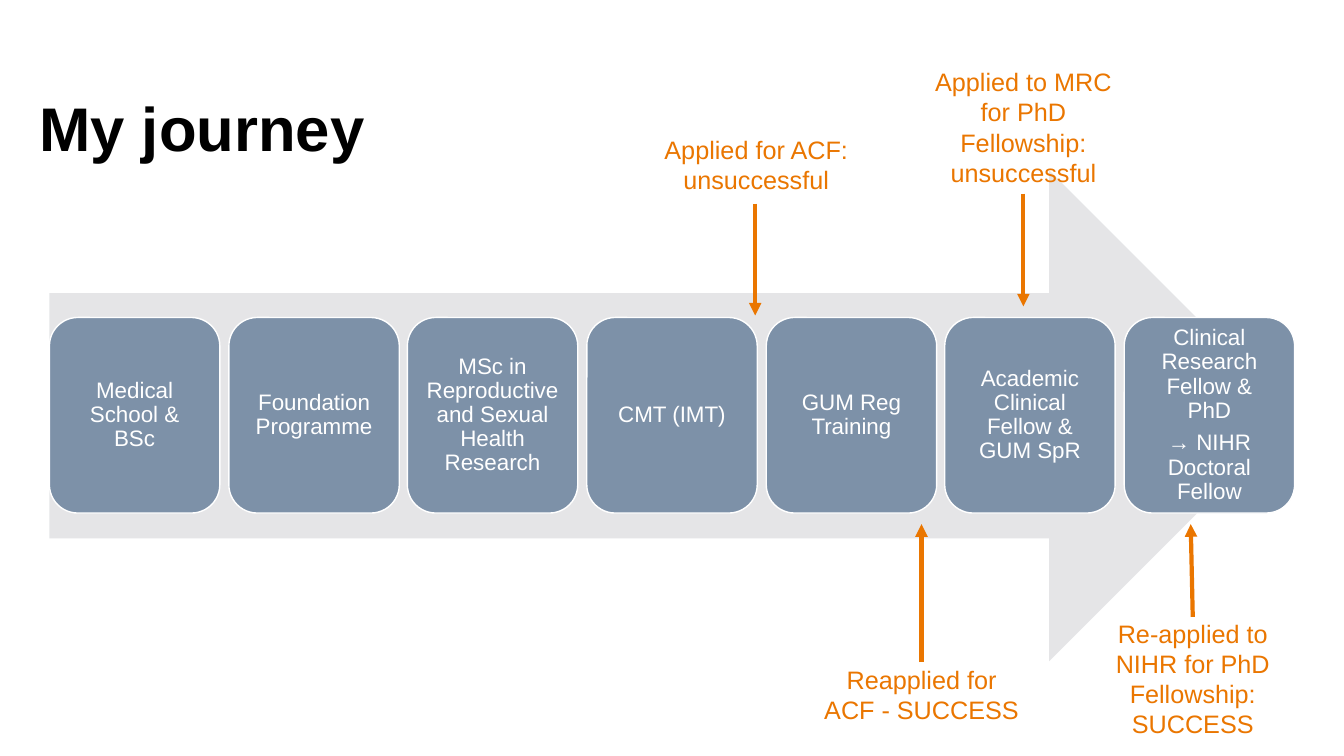
from lxml import etree
from pptx import Presentation
from pptx.dml.color import RGBColor
from pptx.enum.shapes import MSO_CONNECTOR, MSO_SHAPE
from pptx.enum.text import MSO_ANCHOR, MSO_AUTO_SIZE, PP_ALIGN
from pptx.oxml.ns import qn
from pptx.util import Pt

STRAIGHT = MSO_CONNECTOR.STRAIGHT
RIGHT_ARROW = MSO_SHAPE.RIGHT_ARROW
ROUNDED = MSO_SHAPE.ROUNDED_RECTANGLE
RECTANGLE = MSO_SHAPE.RECTANGLE
TOP, MIDDLE = MSO_ANCHOR.TOP, MSO_ANCHOR.MIDDLE
LEFT, CENTER = PP_ALIGN.LEFT, PP_ALIGN.CENTER
GROW, FIXED = MSO_AUTO_SIZE.SHAPE_TO_FIT_TEXT, MSO_AUTO_SIZE.NONE

EMU_PER_PX = 9144
SLIDE_W, SLIDE_H = 1333, 750
NAVY, ORANGE, GREY, WHITE, BLACK = "002855", "EA7600", "CCCDD1", "FFFFFF", "000000"

STAGES = [
    ["Medical School & BSc"],
    ["Foundation Programme"],
    ["MSc in Reproductive and Sexual Health Research"],
    ["CMT (IMT)"],
    ["GUM Reg Training"],
    ["Academic Clinical Fellow & GUM SpR"],
    ["Clinical Research Fellow & PhD", "→ NIHR Doctoral Fellow"],
]
APPLICATIONS = [
    (["Applied to MRC for PhD Fellowship:", "unsuccessful"],
     (904, 61, 222, 131), (1015, 192), (1015, 304)),
    (["Applied for ACF: unsuccessful"],
     (639, 128, 222, 71), (749, 202), (749, 313)),
    (["Reapplied for ACF - SUCCESS"],
     (803, 654, 222, 71), (914, 657), (914, 520)),
    (["Re-applied to NIHR for PhD Fellowship:", "SUCCESS"],
     (1072, 608, 222, 131), (1183, 612), (1181, 520)),
]


def px(*lengths):
    return [length * EMU_PER_PX for length in lengths]


def color(hex_code):
    return RGBColor.from_string(hex_code)


def write(shape, paragraphs, size, ink, bold=False, align=CENTER, anchor=TOP,
          spacing=1.0, gap=0, insets=(10, 5), auto_size=FIXED):
    frame = shape.text_frame
    frame.word_wrap = True
    frame.auto_size = auto_size
    frame.vertical_anchor = anchor
    frame.margin_left = frame.margin_right = insets[0] * EMU_PER_PX
    frame.margin_top = frame.margin_bottom = insets[1] * EMU_PER_PX
    for index, text in enumerate(paragraphs):
        paragraph = frame.add_paragraph() if index else frame.paragraphs[0]
        paragraph.alignment = align
        paragraph.line_spacing = spacing
        paragraph.space_before = Pt(gap if index else 0)
        run = paragraph.add_run()
        run.text = text
        run.font.name = "Arial"
        run.font.size = Pt(size)
        run.font.bold = bold
        run.font.color.rgb = color(ink)


def add_block(slide, preset, box, fill, outline=None):
    block = slide.shapes.add_shape(preset, *px(*box))
    block.shadow.inherit = False
    block.fill.solid()
    block.fill.fore_color.rgb = color(fill)
    if outline:
        block.line.color.rgb = color(outline)
        block.line.width = Pt(1)
    else:
        block.line.fill.background()
    return block


def add_journey(slide, box):
    left, top, width, height = box
    add_block(slide, RIGHT_ARROW, box, GREY)
    card_w, card_h = 169, height * 2 // 5
    pitch = (width - card_w) / (len(STAGES) - 1)
    card_top = top + (height - card_h) // 2
    for index, stage in enumerate(STAGES):
        card_box = (round(left + index * pitch), card_top, card_w, card_h)
        card = add_block(slide, ROUNDED, card_box, NAVY, WHITE)
        write(card, stage, 16, WHITE, anchor=MIDDLE, spacing=0.9, gap=6,
              insets=(10, 10))


def add_veil(slide, box):
    veil = add_block(slide, RECTANGLE, box, WHITE, WHITE)
    tint = veil.fill._xPr.find(qn("a:solidFill"))[0]
    etree.SubElement(tint, qn("a:alpha")).set("val", "49000")


def add_title(slide, box):
    title = slide.shapes.title
    title.left, title.top, title.width, title.height = px(*box)
    write(title, ["My journey"], 44, BLACK, bold=True, align=LEFT,
          spacing=0.9, insets=(0, 0))
    slide.shapes[-1].element.addnext(title.element)


def add_application(slide, outcome, box, start, end):
    label = slide.shapes.add_textbox(*px(*box))
    write(label, outcome, 18, ORANGE, auto_size=GROW)
    pointer = slide.shapes.add_connector(STRAIGHT, *px(*start, *end))
    pointer.line.color.rgb = color(ORANGE)
    pointer.line.width = Pt(3)
    etree.SubElement(pointer.line._get_or_add_ln(), qn("a:tailEnd")).set("type", "triangle")
    etree.SubElement(pointer.element.spPr, qn("a:effectLst"))


def main():
    deck = Presentation()
    deck.slide_width, deck.slide_height = px(SLIDE_W, SLIDE_H)
    slide = deck.slides.add_slide(deck.slide_layouts[5])
    add_journey(slide, (49, 169, 1235, 487))
    add_veil(slide, (0, 169, SLIDE_W, 560))
    add_title(slide, (39, 98, 984, 150))
    for application in APPLICATIONS:
        add_application(slide, *application)
    deck.save("out.pptx")


if __name__ == "__main__":
    main()
